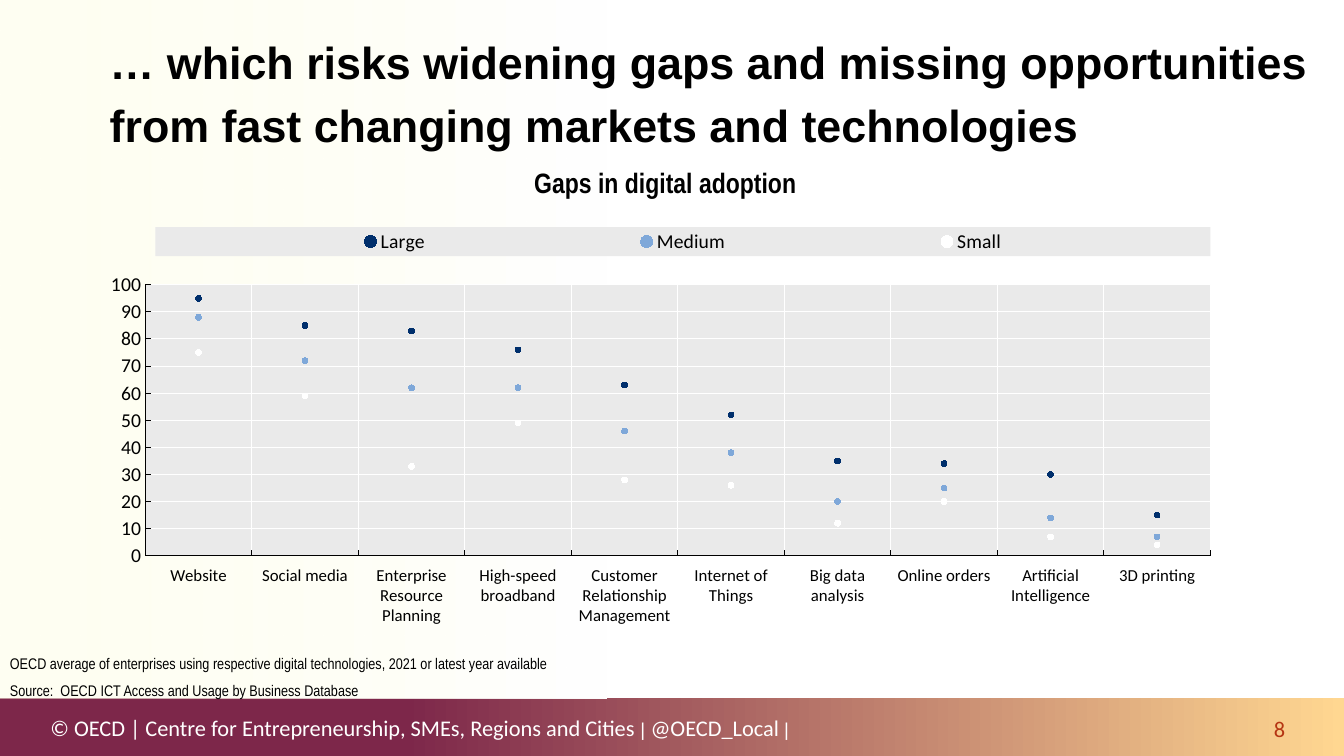
from dataclasses import dataclass

from pptx import Presentation
from pptx.chart.data import CategoryChartData
from pptx.dml.color import RGBColor
from pptx.enum.chart import XL_CHART_TYPE, XL_LEGEND_POSITION, XL_MARKER_STYLE
from pptx.enum.chart import XL_TICK_LABEL_POSITION, XL_TICK_MARK
from pptx.enum.shapes import MSO_SHAPE
from pptx.enum.text import MSO_ANCHOR, PP_ALIGN
from pptx.oxml import parse_xml
from pptx.oxml.ns import nsdecls, qn
from pptx.util import Inches, Pt


@dataclass(frozen=True)
class Theme:
    black: str = "000000"
    white: str = "FFFFFF"
    gold: str = "FFD791"
    plum: str = "7D274A"
    cream: str = "FFFFE7"
    rust: str = "B53513"
    gray: str = "EAEAEA"
    navy: str = "002F6C"
    blue: str = "7FA8D9"
    sans: str = "Arial"
    slim: str = "Arial Narrow"
    body: str = "Calibri"
    title: float = 32
    head: float = 20
    foot: float = 16
    bar: float = 13.3
    label: float = 14
    small: float = 12
    note: float = 11


T = Theme()


@dataclass(frozen=True)
class Run:
    text: str
    font: str
    size: float
    color: str = T.black
    bold: bool = False


@dataclass(frozen=True)
class Box:
    at: tuple[float, float, float, float]
    lines: list[list[Run]]
    align: PP_ALIGN = PP_ALIGN.LEFT
    anchor: MSO_ANCHOR = MSO_ANCHOR.TOP
    pitch: float | None = None
    inset: float = 0.1
    wrap: bool = True


@dataclass(frozen=True)
class Panel:
    at: tuple[float, float, float, float]
    stops: list[tuple[float, str]]
    alpha: int = 100


@dataclass(frozen=True)
class Firm:
    name: str
    vals: list[int]
    color: str


PANELS = [
    Panel((0, 6.93, 13.33, 0.57), [(0, T.gold), (0.7, T.plum)]),
    Panel((0, 0, 6.02, 6.93), [(0, T.white), (1, T.cream)], 50),
]

BOXES = [
    Box((0.37, 7.08, 7.6, 0.27), [[
        Run("© OECD | Centre for Entrepreneurship, SMEs, Regions and Cities", T.body, T.foot, T.white),
        Run(" | ", T.sans, T.bar, T.white),
        Run("@OECD_Local", T.body, T.foot, T.white),
        Run(" |", T.sans, T.bar, T.white),
    ]], anchor=MSO_ANCHOR.MIDDLE, inset=0.13, wrap=False),
    Box((0.99, 0.2, 12.34, 1.42), [[
        Run("… which risks widening gaps and missing opportunities from fast changing markets and technologies",
            T.sans, T.title, bold=True),
    ]], pitch=45.3),
    Box((12.44, 7.09, 0.5, 0.27), [[Run("8", T.body, T.foot, T.rust)]],
        PP_ALIGN.CENTER, MSO_ANCHOR.MIDDLE, wrap=False),
    Box((0, 6.44, 9.9, 0.35), [
        [Run("OECD average of enterprises using respective digital technologies, 2021 or latest year available",
             T.slim, T.note)],
        [Run("Source:  OECD ICT Access and Usage by Business Database", T.slim, T.note)],
    ], PP_ALIGN.JUSTIFY),
    Box((5.2, 1.59, 2.93, 0.26), [[Run("Gaps in digital adoption", T.slim, T.head, bold=True)]],
        PP_ALIGN.JUSTIFY),
]

TOOLS = ["Website", "Social media", "Enterprise Resource Planning", "High-speed broadband",
         "Customer Relationship Management", "Internet of Things", "Big data analysis",
         "Online orders", "Artificial Intelligence", "3D printing"]
FIRMS = [
    Firm("Large", [95, 85, 83, 76, 63, 52, 35, 34, 30, 15], T.navy),
    Firm("Medium", [88, 72, 62, 62, 46, 38, 20, 25, 14, 7], T.blue),
    Firm("Small", [75, 59, 33, 49, 28, 26, 12, 20, 7, 4], T.white),
]


def add_panel(slide, panel: Panel) -> None:
    """Draw a borderless rectangle with a gradient running right to left."""
    shape = slide.shapes.add_shape(MSO_SHAPE.RECTANGLE, *map(Inches, panel.at))
    shape.shadow.inherit = False
    shape.line.fill.background()
    shape.fill.gradient()
    shape.fill.gradient_angle = 180
    for stop, (place, color) in zip(shape.fill.gradient_stops, panel.stops):
        stop.position = place
        stop.color.rgb = RGBColor.from_string(color)
    if panel.alpha < 100:
        tint = shape.element.xpath(".//a:gs[2]/a:srgbClr")[0]
        tint.append(parse_xml(f'<a:alpha {nsdecls("a")} val="{panel.alpha * 1000}"/>'))


def add_box(slide, box: Box) -> None:
    """Draw a text box from its lines of runs."""
    frame = slide.shapes.add_textbox(*map(Inches, box.at)).text_frame
    frame.word_wrap = box.wrap
    frame.vertical_anchor = box.anchor
    frame.margin_left = Inches(box.inset)
    for i, line in enumerate(box.lines):
        para = frame.add_paragraph() if i else frame.paragraphs[0]
        para.alignment = box.align
        if i:
            para.space_before = Pt(6)
        if box.pitch:
            para.line_spacing = Pt(box.pitch)
        for part in line:
            run = para.add_run()
            run.text = part.text
            run.font.name = part.font
            run.font.size = Pt(part.size)
            run.font.bold = part.bold
            run.font.color.rgb = RGBColor.from_string(part.color)


def make_layout(place: tuple[float, float, float, float], target: str = ""):
    """Return a manual chart layout, in fractions of the chart."""
    sides = "".join(f'<c:{k} val="{v}"/>' for k, v in zip("xywh", place))
    return parse_xml(f'<c:layout {nsdecls("c")}><c:manualLayout>{target}<c:xMode val="edge"/>'
                     f'<c:yMode val="edge"/>{sides}</c:manualLayout></c:layout>')


def make_fill(color: str):
    """Return solid fill properties for a chart part."""
    return parse_xml(f'<c:spPr {nsdecls("c", "a")}><a:solidFill><a:srgbClr val="{color}"/>'
                     '</a:solidFill><a:ln><a:noFill/></a:ln></c:spPr>')


def style_axis(axis, size: float) -> None:
    """Set the lines, ticks and labels of an axis."""
    axis.major_tick_mark = XL_TICK_MARK.INSIDE
    axis.minor_tick_mark = XL_TICK_MARK.NONE
    axis.has_major_gridlines = True
    for line, color in ((axis.format.line, T.black), (axis.major_gridlines.format.line, T.white)):
        line.color.rgb = RGBColor.from_string(color)
        line.width = Pt(0.75)
    axis.tick_labels.font.size = Pt(size)


def add_dots(slide, firms: list[Firm]) -> None:
    """Draw the chart of adoption by firm size."""
    data = CategoryChartData()
    data.categories = TOOLS
    for firm in firms:
        data.add_series(firm.name, firm.vals)
    place = map(Inches, (0.99, 2.17, 11.02, 4.12))
    chart = slide.shapes.add_chart(XL_CHART_TYPE.LINE_MARKERS, *place, data).chart
    chart.has_title = False
    chart.font.name = T.body
    chart.font.size = Pt(T.label)
    chart.font.color.rgb = RGBColor.from_string(T.black)
    chart.plots[0].vary_by_categories = False
    for series, firm in zip(chart.plots[0].series, firms):
        series.smooth = False
        series.format.line.fill.background()
        mark = series.marker
        mark.style = XL_MARKER_STYLE.CIRCLE
        mark.size = 4
        mark.format.fill.solid()
        mark.format.fill.fore_color.rgb = RGBColor.from_string(firm.color)
        mark.format.line.fill.background()
    style_axis(chart.category_axis, T.small)
    chart.category_axis.tick_label_position = XL_TICK_LABEL_POSITION.LOW
    style_axis(chart.value_axis, T.label)
    chart.value_axis.minimum_scale = 0
    chart.value_axis.maximum_scale = 100
    chart.value_axis.major_unit = 10
    chart.has_legend = True
    chart.legend.position = XL_LEGEND_POSITION.RIGHT
    chart.legend.include_in_layout = True
    chart.legend.font.size = Pt(T.label)
    root = chart.element
    for old in root.xpath(".//c:plotArea/c:layout | .//c:legend/c:layout"):
        old.getparent().remove(old)
    plot = root.find(".//" + qn("c:plotArea"))
    plot.insert(0, make_layout((0.01, 0.13, 0.99, 0.85), '<c:layoutTarget val="outer"/>'))
    plot.append(make_fill(T.gray))
    over = root.find(".//" + qn("c:legend") + "/" + qn("c:overlay"))
    over.addprevious(make_layout((0.05, 0.02, 0.95, 0.07)))
    over.addnext(make_fill(T.gray))


def main() -> None:
    """Build the slide and save it."""
    deck = Presentation()
    deck.slide_width, deck.slide_height = Inches(13.33), Inches(7.5)
    slide = deck.slides.add_slide(deck.slide_layouts[6])
    for panel in PANELS:
        add_panel(slide, panel)
    add_dots(slide, FIRMS)
    for box in BOXES:
        add_box(slide, box)
    deck.save("out.pptx")


if __name__ == "__main__":
    main()
